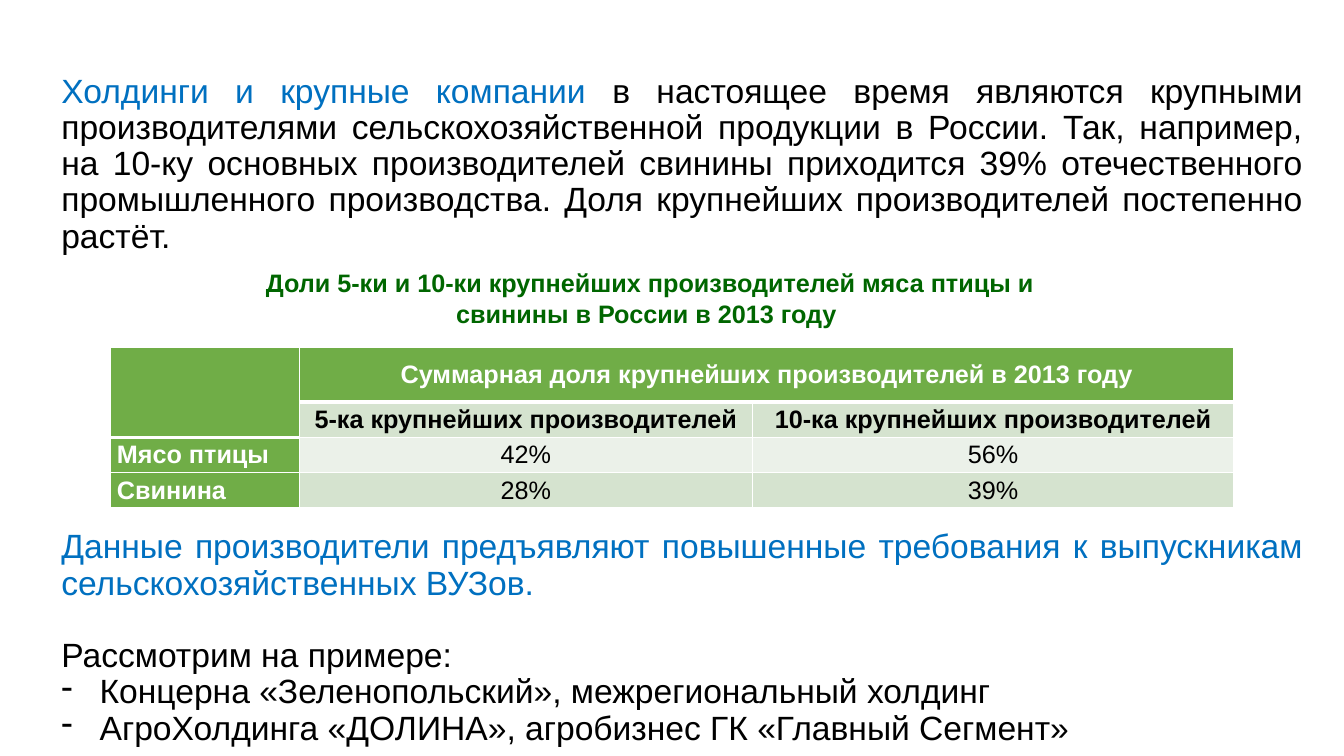
from lxml.etree import SubElement
from pptx import Presentation
from pptx.dml.color import RGBColor
from pptx.enum.text import MSO_ANCHOR, PP_ALIGN
from pptx.oxml.ns import qn
from pptx.util import Inches, Pt

BLUE = RGBColor(0x00, 0x70, 0xC0)
BLACK = RGBColor(0x00, 0x00, 0x00)
WHITE = RGBColor(0xFF, 0xFF, 0xFF)
DARK_GREEN = RGBColor(0x00, 0x66, 0x00)
GREEN = RGBColor(0x70, 0xAD, 0x47)
BAND_DARK = RGBColor(0xD5, 0xE3, 0xCF)
BAND_LIGHT = RGBColor(0xEB, 0xF1, 0xE9)

TABLE_ROWS = [
    ["", "Суммарная доля крупнейших производителей в 2013 году", ""],
    ["", "5-ка крупнейших производителей", "10-ка крупнейших производителей"],
    ["Мясо птицы", "42%", "56%"],
    ["Свинина", "28%", "39%"],
]
COLUMN_WIDTHS = [1.88, 4.49, 4.78]
ROW_HEIGHTS = [0.54, 0.35, 0.35, 0.35]
EXAMPLES = [
    "Концерна «Зеленопольский», межрегиональный холдинг",
    "АгроХолдинга «ДОЛИНА», агробизнес ГК «Главный Сегмент»",
]


def add_run(paragraph, text, size, color, bold=False):
    """Append one formatted run."""
    run = paragraph.add_run()
    run.text = text
    run.font.name = "Arial"
    run.font.size = Pt(size)
    run.font.bold = bold
    run.font.color.rgb = color


def add_text_frame(slide, left, top, width, height):
    """Add a wrapping, vertically centred text box and return its frame."""
    box = slide.shapes.add_textbox(Inches(left), Inches(top), Inches(width), Inches(height))
    frame = box.text_frame
    frame.word_wrap = True
    frame.vertical_anchor = MSO_ANCHOR.MIDDLE
    return frame


def justify(paragraph):
    """Set the alignment and line spacing of body text."""
    paragraph.alignment = PP_ALIGN.JUSTIFY
    paragraph.line_spacing = 0.9


def add_introduction(slide, left, top, width, height):
    """Place the opening paragraph."""
    paragraph = add_text_frame(slide, left, top, width, height).paragraphs[0]
    justify(paragraph)
    add_run(paragraph, "Холдинги и крупные компании ", 24, BLUE)
    add_run(
        paragraph,
        "в настоящее время являются крупными производителями сельскохозяйственной "
        "продукции в России. Так, например, на 10-ку основных производителей свинины "
        "приходится 39% отечественного промышленного производства. Доля крупнейших "
        "производителей постепенно растёт.",
        24,
        BLACK,
    )


def add_table_title(slide, left, top, width, height):
    """Place the heading above the table."""
    paragraph = add_text_frame(slide, left, top, width, height).paragraphs[0]
    paragraph.alignment = PP_ALIGN.CENTER
    add_run(
        paragraph,
        "Доли 5-ки и 10-ки крупнейших производителей мяса птицы и свинины "
        "в России в 2013 году ",
        18,
        DARK_GREEN,
        True,
    )


def set_borders(cell, bottom_width):
    """Draw white cell borders with the given bottom width in points."""
    properties = cell._tc.get_or_add_tcPr()
    widths = {"a:lnL": 1, "a:lnR": 1, "a:lnT": 1, "a:lnB": bottom_width}
    for position, (tag, width) in enumerate(widths.items()):
        line = SubElement(properties, qn(tag), w=str(Pt(width)))
        fill = SubElement(line, qn("a:solidFill"))
        SubElement(fill, qn("a:srgbClr"), val=str(WHITE))
        properties.insert(position, line)


def style_cell(cell, text, row, column):
    """Fill one cell and write its text according to its place."""
    is_header = row == 0 or column == 0
    cell.fill.solid()
    if is_header:
        cell.fill.fore_color.rgb = GREEN
    else:
        cell.fill.fore_color.rgb = BAND_DARK if row % 2 else BAND_LIGHT
    cell.vertical_anchor = MSO_ANCHOR.MIDDLE
    cell.margin_left = cell.margin_right = Inches(0.07)
    cell.margin_top = cell.margin_bottom = 0
    set_borders(cell, 3 if row == 0 or (row, column) == (1, 0) else 1)
    if text:
        paragraph = cell.text_frame.paragraphs[0]
        paragraph.alignment = PP_ALIGN.CENTER if column else PP_ALIGN.LEFT
        add_run(paragraph, text, 18, WHITE if is_header else BLACK, is_header or row == 1)


def add_share_table(slide, left, top):
    """Place the table of producers' shares."""
    table = slide.shapes.add_table(
        len(ROW_HEIGHTS), len(COLUMN_WIDTHS), Inches(left), Inches(top),
        Inches(sum(COLUMN_WIDTHS)), Inches(sum(ROW_HEIGHTS)),
    ).table
    for column, width in zip(table.columns, COLUMN_WIDTHS):
        column.width = Inches(width)
    for row, height in zip(table.rows, ROW_HEIGHTS):
        row.height = Inches(height)
    table.cell(0, 0).merge(table.cell(1, 0))
    table.cell(0, 1).merge(table.cell(0, 2))
    for row, texts in enumerate(TABLE_ROWS):
        for column, text in enumerate(texts):
            style_cell(table.cell(row, column), text, row, column)


def add_conclusion(slide, left, top, width, height):
    """Place the closing statement and the list of examples."""
    frame = add_text_frame(slide, left, top, width, height)
    frame.margin_top = Inches(0.41)
    statement = frame.paragraphs[0]
    justify(statement)
    add_run(
        statement,
        "Данные производители предъявляют повышенные требования к выпускникам "
        "сельскохозяйственных ВУЗов.",
        24,
        BLUE,
    )
    lead = frame.add_paragraph()
    justify(lead)
    lead.space_before = Pt(26)
    add_run(lead, "Рассмотрим на примере:", 24, BLACK)
    for example in EXAMPLES:
        item = frame.add_paragraph()
        justify(item)
        properties = item._p.get_or_add_pPr()
        properties.set("marL", str(Inches(0.38)))
        properties.set("indent", str(Inches(-0.38)))
        SubElement(properties, qn("a:buFontTx"))
        SubElement(properties, qn("a:buChar"), char="-")
        add_run(item, example, 24, BLACK)


def main():
    """Build and save the slide."""
    presentation = Presentation()
    presentation.slide_width = Inches(13.33)
    presentation.slide_height = Inches(7.5)
    slide = presentation.slides.add_slide(presentation.slide_layouts[6])
    add_introduction(slide, 0.51, 0.67, 12.51, 1.93)
    add_share_table(slide, 1.09, 3.45)
    add_table_title(slide, 2.19, 2.6, 8.51, 0.71)
    add_conclusion(slide, 0.51, 5.49, 12.51, 1.33)
    presentation.save("out.pptx")


if __name__ == "__main__":
    main()
